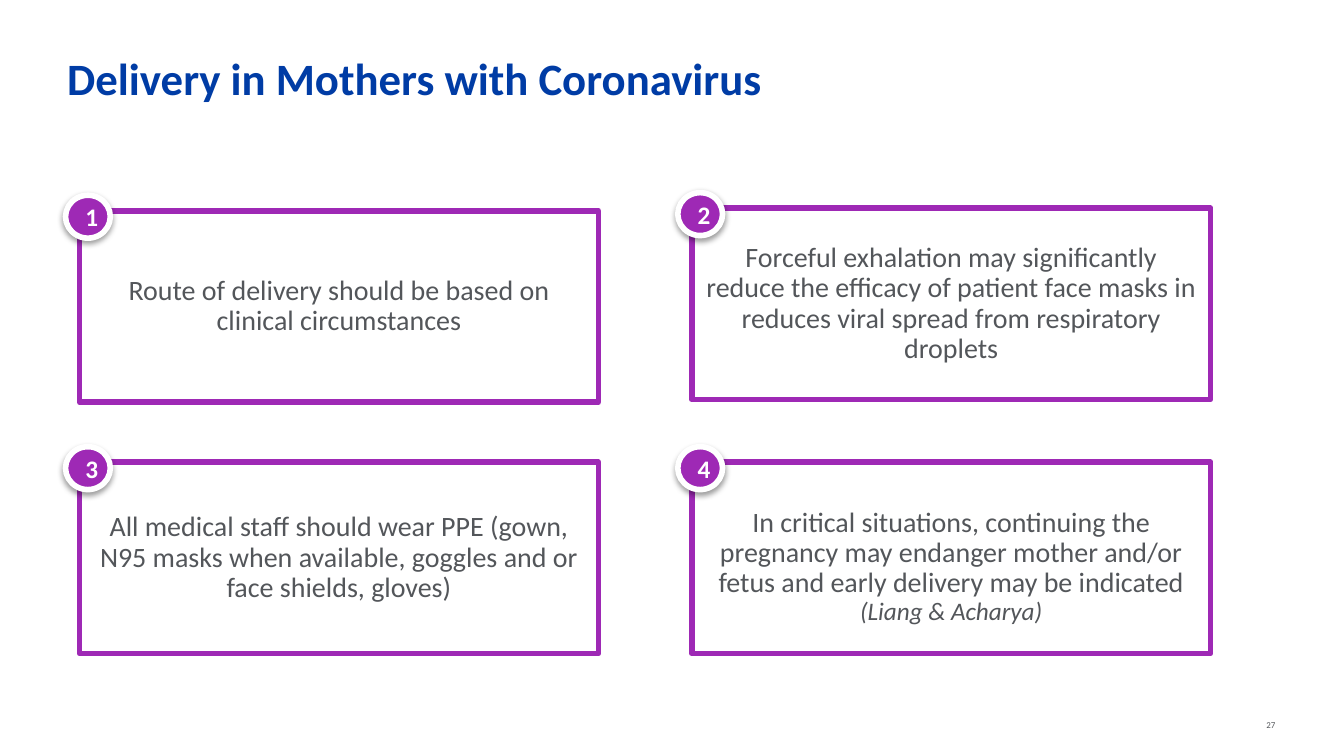
from dataclasses import dataclass

from lxml.etree import SubElement
from pptx import Presentation
from pptx.dml.color import RGBColor
from pptx.enum.shapes import MSO_SHAPE
from pptx.enum.text import MSO_ANCHOR, MSO_AUTO_SIZE, PP_ALIGN
from pptx.oxml.ns import qn
from pptx.util import Pt


@dataclass(frozen=True)
class Theme:
    font: str = "Calibri"
    navy: str = "003CA5"
    grey: str = "53565A"
    purple: str = "9E29B5"
    white: str = "FFFFFF"
    black: str = "000000"
    title_size: float = 24
    body_size: float = 15
    small_size: float = 13.5
    number_size: float = 4.8
    border: float = 3


def add_text(paragraph, text, *, font, size, color, bold=False, italic=False):
    """Append a formatted run to a paragraph."""
    run = paragraph.add_run()
    run.text = text
    run.font.name = font
    run.font.size = Pt(size)
    run.font.color.rgb = RGBColor.from_string(color)
    run.font.bold = bold
    run.font.italic = italic


class SlideBuilder:
    def __init__(self, slide, theme):
        self.slide = slide
        self.theme = theme

    def label(self, paragraph, text, size, color, **style):
        add_text(paragraph, text, font=self.theme.font, size=size, color=color, **style)

    def clear_insets(self, frame):
        frame.margin_left = frame.margin_top = 0
        frame.margin_right = frame.margin_bottom = 0
        frame.word_wrap = True

    def title(self, text, left, top, width, height):
        heading = self.slide.shapes.title
        heading.left, heading.top = Pt(left), Pt(top)
        heading.width, heading.height = Pt(width), Pt(height)
        frame = heading.text_frame
        self.clear_insets(frame)
        frame.auto_size = MSO_AUTO_SIZE.NONE
        frame.vertical_anchor = MSO_ANCHOR.TOP
        frame.paragraphs[0].alignment = PP_ALIGN.LEFT
        self.label(frame.paragraphs[0], text, self.theme.title_size,
                   self.theme.navy, bold=True)

    def page_number(self, text, left, top, width, height):
        page = self.slide.shapes.add_textbox(Pt(left), Pt(top), Pt(width), Pt(height))
        frame = page.text_frame
        self.clear_insets(frame)
        frame.vertical_anchor = MSO_ANCHOR.BOTTOM
        frame.paragraphs[0].alignment = PP_ALIGN.RIGHT
        self.label(frame.paragraphs[0], text, self.theme.number_size, self.theme.grey)

    def outlined(self, kind, left, top, width, height, fill, line):
        """Add a filled, outlined shape whose text is centred both ways."""
        shape = self.slide.shapes.add_shape(kind, Pt(left), Pt(top), Pt(width), Pt(height))
        shape.shadow.inherit = False
        shape.fill.solid()
        shape.fill.fore_color.rgb = RGBColor.from_string(fill)
        shape.line.color.rgb = RGBColor.from_string(line)
        shape.line.width = Pt(self.theme.border)
        shape.text_frame.word_wrap = True
        shape.text_frame.vertical_anchor = MSO_ANCHOR.MIDDLE
        shape.text_frame.paragraphs[0].alignment = PP_ALIGN.CENTER
        return shape

    def card(self, text, left, top, width, height, citation="", lowered=0):
        box = self.outlined(MSO_SHAPE.RECTANGLE, left, top, width, height,
                            self.theme.white, self.theme.purple)
        box.text_frame.margin_top = Pt(3.6 + lowered)
        statement = box.text_frame.paragraphs[0]
        statement.line_spacing = 0.9
        self.label(statement, text, self.theme.body_size, self.theme.grey)
        if citation:
            self.label(statement, citation, self.theme.small_size,
                       self.theme.grey, italic=True)

    def badge(self, number, left, top, width, height):
        disc = self.outlined(MSO_SHAPE.OVAL, left, top, width, height,
                             self.theme.purple, self.theme.white)
        self.label(disc.text_frame.paragraphs[0], str(number), self.theme.small_size,
                   self.theme.white, bold=True)
        self.drop_shadow(disc)

    def drop_shadow(self, shape):
        effects = shape.element.spPr.find(qn("a:effectLst"))
        shadow = SubElement(effects, qn("a:outerShdw"), blurRad=str(Pt(3.1)),
                            dist=str(Pt(1.6)), dir="5400000", algn="t",
                            rotWithShape="0")
        color = SubElement(shadow, qn("a:srgbClr"), val=self.theme.black)
        SubElement(color, qn("a:alpha"), val="38000")


def main():
    deck = Presentation()
    deck.slide_width, deck.slide_height = Pt(720), Pt(405)
    builder = SlideBuilder(deck.slides.add_slide(deck.slide_layouts[5]), Theme())

    # Heading and page number
    builder.title("Delivery in Mothers with Coronavirus", 36, 27.4, 648, 46.8)
    builder.page_number("27", 625, 374.4, 58.3, 16.6)

    # Two by two numbered cards: text, top, extra options
    cards = [
        ("Route of delivery should be based on clinical circumstances", 113, {}),
        ("Forceful exhalation may significantly reduce the efficacy of patient "
         "face masks in reduces viral spread from respiratory droplets", 111.6, {}),
        ("All medical staff should wear PPE (gown, N95 masks when available, "
         "goggles and or face shields, gloves)", 247.7, {}),
        ("In critical situations, continuing the pregnancy may endanger mother "
         "and/or fetus and early delivery may be indicated ", 247.7,
         {"citation": "(Liang & Acharya)", "lowered": 9.6}),
    ]
    for index, (statement, top, options) in enumerate(cards):
        left = 42.6 + index % 2 * 328
        builder.card(statement, left, top, 278, 102.5, **options)
        builder.badge(index + 1, left - 7.5, top - 8.4, 24, 23)

    deck.save("out.pptx")


if __name__ == "__main__":
    main()
